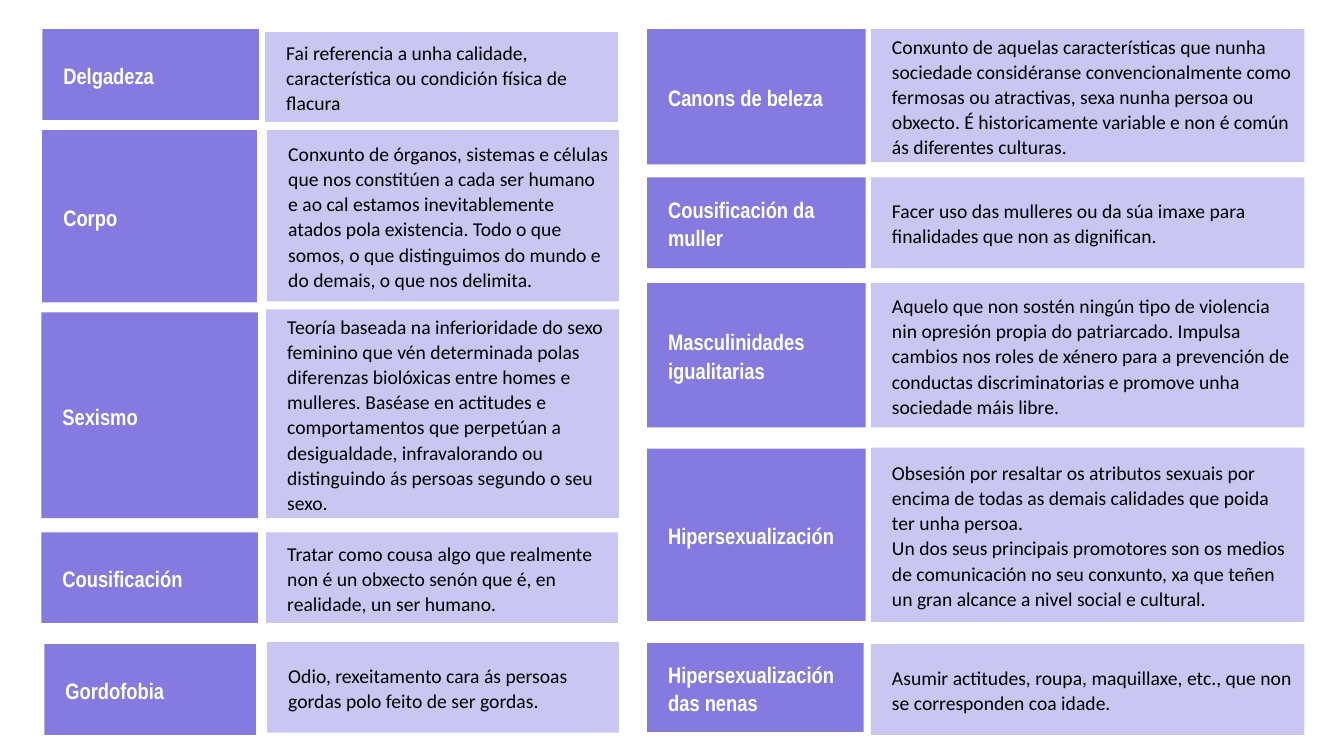
import pptx
import pptx.util
import pptx.dml.color
import pptx.enum.shapes
import pptx.enum.text
from dataclasses import dataclass

Pt = pptx.util.Pt


@dataclass(frozen=True)
class CardStyle:
    fill: str
    color: str
    font: str
    size: int
    bold: bool


@dataclass(frozen=True)
class Theme:
    term: CardStyle = CardStyle("847AE0", "FFFFFF", "Arial Narrow", 16, True)
    definition: CardStyle = CardStyle("CAC6F2", "000000", "Calibri", 14, False)
    indent: int = 8
    line_spacing: float = 1.07
    space_after: int = 8


THEME = Theme()

# Right column: shared left edges and widths
TERM_X, TERM_W = 462.2, 156.2
DEF_X, DEF_W = 622.1, 309.6

# Each entry: term, term box, definition paragraphs, definition box
LEFT_ENTRIES = [
    ("Delgadeza", (30.2, 20.9, 154.8, 64.8),
     ["Fai referencia a unha calidade, característica ou condición física de flacura"],
     (189.4, 23, 252, 64.1)),
    ("Corpo", (30.2, 92.9, 153.4, 123.1),
     ["Conxunto de órganos, sistemas e células que nos constitúen a cada ser humano "
      "e ao cal estamos inevitablemente atados pola existencia. Todo o que somos, "
      "o que distinguimos do mundo e do demais, o que nos delimita."],
     (190.8, 92.9, 251.3, 122.4)),
    ("Sexismo", (29.5, 223.2, 154.8, 146.9),
     ["Teoría baseada na inferioridade do sexo feminino que vén determinada polas "
      "diferenzas biolóxicas entre homes e mulleres. Baséase en actitudes e "
      "comportamentos que perpetúan a desigualdade, infravalorando ou distinguindo "
      "ás persoas segundo o seu sexo."],
     (190.1, 221, 252, 149)),
    ("Cousificación", (29.5, 380.2, 154.8, 64.8),
     ["Tratar como cousa algo que realmente non é un obxecto senón que é, "
      "en realidade, un ser humano."],
     (190.1, 380.2, 251.3, 64.8)),
    ("Gordofobia", (31.7, 460.1, 151.2, 64.8),
     ["Odio, rexeitamento cara ás persoas gordas polo feito de ser gordas."],
     (190.8, 458.6, 251.3, 64.8)),
]

RIGHT_ENTRIES = [
    ("Canons de beleza", (TERM_X, 20.9, TERM_W, 96.5),
     ["Conxunto de aquelas características que nunha sociedade considéranse "
      "convencionalmente como fermosas ou atractivas, sexa nunha persoa ou obxecto. "
      "É historicamente variable e non é común ás diferentes culturas."],
     (DEF_X, 20.9, DEF_W, 95)),
    ("Cousificación da muller", (TERM_X, 126.7, TERM_W, 64.8),
     ["Facer uso das mulleres ou da súa imaxe para finalidades que non as dignifican."],
     (DEF_X, 126.7, DEF_W, 64.8)),
    ("Masculinidades igualitarias", (TERM_X, 202.3, TERM_W, 103),
     ["Aquelo que non sostén ningún tipo de violencia nin opresión propia do "
      "patriarcado. Impulsa cambios nos roles de xénero para a prevención de "
      "conductas discriminatorias e promove unha sociedade máis libre."],
     (DEF_X, 202.3, DEF_W, 103)),
    ("Hipersexualización", (TERM_X, 320.4, TERM_W, 123.1),
     ["Obsesión por resaltar os atributos sexuais por encima de todas as demais "
      "calidades que poida ter unha persoa.",
      "Un dos seus principais promotores son os medios de comunicación no seu "
      "conxunto, xa que teñen un gran alcance a nivel social e cultural."],
     (DEF_X, 319.7, DEF_W, 124.6)),
    ("Hipersexualización das nenas", (TERM_X, 459.4, 154.8, 63.4),
     ["Asumir actitudes, roupa, maquillaxe, etc., que non se corresponden coa idade."],
     (DEF_X, 460.1, DEF_W, 64.8)),
]


def rgb(value):
    return pptx.dml.color.RGBColor.from_string(value)


def add_paragraph(p, text, style, space_after):
    p._p.get_or_add_pPr().set("marL", str(Pt(THEME.indent)))
    p.alignment = pptx.enum.text.PP_ALIGN.LEFT
    p.line_spacing = THEME.line_spacing
    p.space_after = Pt(space_after)
    r = p.add_run()
    r.text = text
    r.font.name = style.font
    r.font.size = Pt(style.size)
    r.font.bold = style.bold
    r.font.color.rgb = rgb(style.color)


def add_card(s, box, paragraphs, style):
    sp = s.shapes.add_shape(pptx.enum.shapes.MSO_SHAPE.RECTANGLE, *map(Pt, box))
    sp.shadow.inherit = False
    sp.fill.solid()
    sp.fill.fore_color.rgb = rgb(style.fill)
    sp.line.fill.background()
    tf = sp.text_frame
    tf.word_wrap = True
    tf.vertical_anchor = pptx.enum.text.MSO_ANCHOR.MIDDLE
    last = len(paragraphs) - 1
    for i, text in enumerate(paragraphs):
        p = tf.add_paragraph() if i else tf.paragraphs[0]
        add_paragraph(p, text, style, THEME.space_after if i == last else 0)


def add_entry(s, term, term_box, definition, definition_box):
    add_card(s, term_box, [term], THEME.term)
    add_card(s, definition_box, definition, THEME.definition)


def main():
    prs = pptx.Presentation()
    prs.slide_width, prs.slide_height = Pt(960), Pt(540)
    s = prs.slides.add_slide(prs.slide_layouts[6])

    # Glossary: two columns of terms with their definitions
    for entry in LEFT_ENTRIES + RIGHT_ENTRIES:
        add_entry(s, *entry)

    prs.save("out.pptx")


if __name__ == "__main__":
    main()
